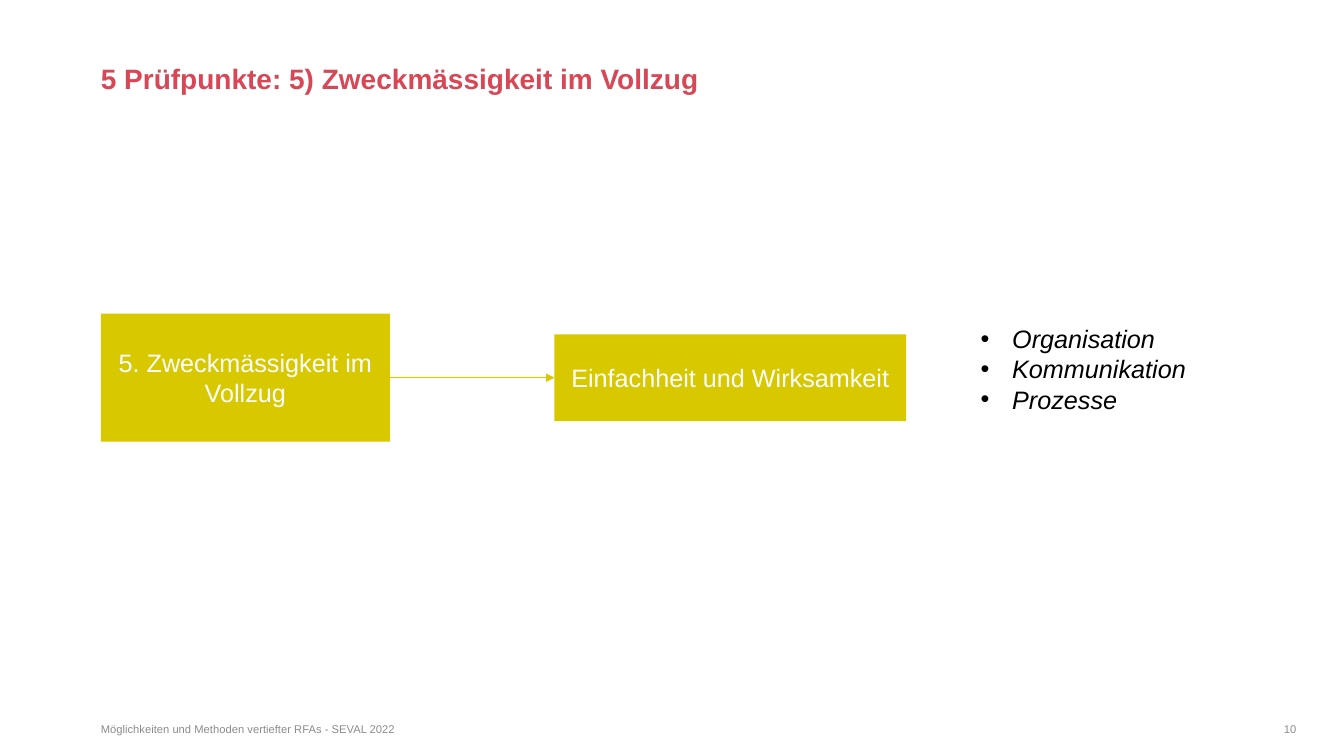
import pptx
import pptx.chart.data
import pptx.dml.color
import pptx.enum.shapes
import pptx.enum.text
import pptx.oxml
import pptx.oxml.ns
import pptx.util
from dataclasses import dataclass

Pt = pptx.util.Pt
ALIGN = pptx.enum.text.PP_ALIGN
ANCHOR = pptx.enum.text.MSO_ANCHOR

HEADING = "5 Prüfpunkte: 5) Zweckmässigkeit im Vollzug"
CHECKPOINT = "5. Zweckmässigkeit im Vollzug"
CRITERION = "Einfachheit und Wirksamkeit"
ASPECTS = ["Organisation", "Kommunikation", "Prozesse"]
FOOTER = "Möglichkeiten und Methoden vertiefter RFAs - SEVAL 2022"
PAGE = "10"


@dataclass(frozen=True)
class Theme:
    font: str = "Arial"
    red: str = "D84755"
    yellow: str = "D8C800"
    white: str = "FFFFFF"
    black: str = "000000"
    grey: str = "8C8C8C"
    heading: int = 20
    body: int = 18
    small: int = 8


THEME = Theme()
LEFT, RIGHT = 72, 926
ASPECTS_LEFT = 693.4
FLOW_MIDDLE = 269.8
FOOTER_TOP, FOOTER_HEIGHT = 516.2, 18.7
HANGING = 22.5


def rgb(value):
    return pptx.dml.color.RGBColor.from_string(value)


def style(paragraph, size, color, align=ALIGN.LEFT, bold=False, italic=False):
    paragraph.alignment = align
    for run in paragraph.runs:
        font = run.font
        font.name, font.size = THEME.font, Pt(size)
        font.bold, font.italic = bold, italic
        font.color.rgb = rgb(color)


def clear_margins(frame):
    frame.margin_left = frame.margin_right = frame.margin_top = frame.margin_bottom = 0


def add_flow_box(slide, text, left, width, height):
    box = slide.shapes.add_shape(
        pptx.enum.shapes.MSO_SHAPE.RECTANGLE,
        Pt(left), Pt(FLOW_MIDDLE - height / 2), Pt(width), Pt(height))
    box.shadow.inherit = False
    box.fill.solid()
    box.fill.fore_color.rgb = rgb(THEME.yellow)
    box.line.fill.background()
    frame = box.text_frame
    frame.word_wrap = True
    frame.vertical_anchor = ANCHOR.MIDDLE
    frame.text = text
    style(frame.paragraphs[0], THEME.body, THEME.white, ALIGN.CENTER)
    return box


def add_arrow(slide, start, end):
    arrow = slide.shapes.add_connector(pptx.enum.shapes.MSO_CONNECTOR.STRAIGHT, 0, 0, 0, 0)
    arrow.begin_connect(start, 3)
    arrow.end_connect(end, 1)
    arrow.line.color.rgb = rgb(THEME.yellow)
    arrow.line.width = Pt(0.5)
    head = pptx.oxml.ns.qn("a:tailEnd")
    arrow.line._get_or_add_ln().makeelement(head)
    properties = arrow._element.spPr
    line = properties.find(pptx.oxml.ns.qn("a:ln"))
    line.append(line.makeelement(head, {"type": "triangle"}))
    properties.append(properties.makeelement(pptx.oxml.ns.qn("a:effectLst")))


def add_bullet(paragraph):
    properties = paragraph._p.get_or_add_pPr()
    properties.set("marL", str(Pt(HANGING)))
    properties.set("indent", str(-Pt(HANGING)))
    for tag, attributes in (("a:buFont", {"typeface": THEME.font}), ("a:buChar", {"char": "•"})):
        properties.append(properties.makeelement(pptx.oxml.ns.qn(tag), attributes))


def add_heading(slide):
    title = slide.shapes.title
    title.left, title.top, title.width, title.height = Pt(LEFT), Pt(46.8), Pt(RIGHT - LEFT), Pt(62)
    frame = title.text_frame
    clear_margins(frame)
    frame.vertical_anchor = ANCHOR.TOP
    frame.text = HEADING
    frame.paragraphs[0].line_spacing = 0.9
    style(frame.paragraphs[0], THEME.heading, THEME.red, bold=True)


def add_aspects(slide):
    height = 72.7
    box = slide.shapes.add_textbox(Pt(ASPECTS_LEFT), Pt(227.5), Pt(229), Pt(height))
    frame = box.text_frame
    frame.word_wrap = True
    frame.text = "\n".join(ASPECTS)
    for paragraph in frame.paragraphs:
        add_bullet(paragraph)
        style(paragraph, THEME.body, THEME.black, italic=True)


def add_footer(slide):
    for text, left, width, align in (
            (FOOTER, LEFT, 324, ALIGN.LEFT),
            (PAGE, ASPECTS_LEFT, RIGHT - ASPECTS_LEFT, ALIGN.RIGHT)):
        box = slide.shapes.add_textbox(Pt(left), Pt(FOOTER_TOP), Pt(width), Pt(FOOTER_HEIGHT))
        frame = box.text_frame
        frame.word_wrap = True
        clear_margins(frame)
        frame.text = text
        style(frame.paragraphs[0], THEME.small, THEME.grey, align)


def main():
    deck = pptx.Presentation()
    deck.slide_width, deck.slide_height = Pt(960), Pt(540)
    slide = deck.slides.add_slide(deck.slide_layouts[5])
    add_heading(slide)
    add_footer(slide)
    checkpoint = add_flow_box(slide, CHECKPOINT, LEFT, 206.6, 91.4)
    criterion = add_flow_box(slide, CRITERION, 396, 251.3, 62)
    add_aspects(slide)
    add_arrow(slide, checkpoint, criterion)
    deck.save("out.pptx")


if __name__ == "__main__":
    main()
